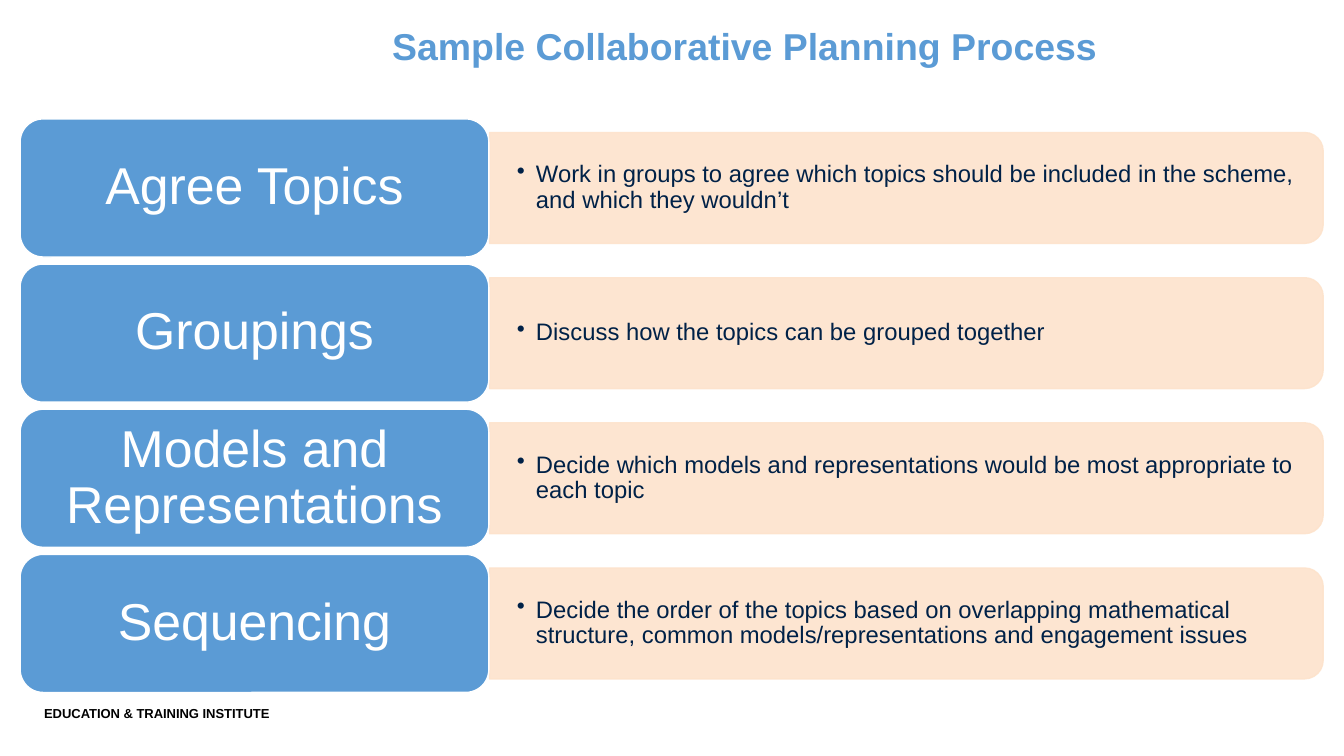
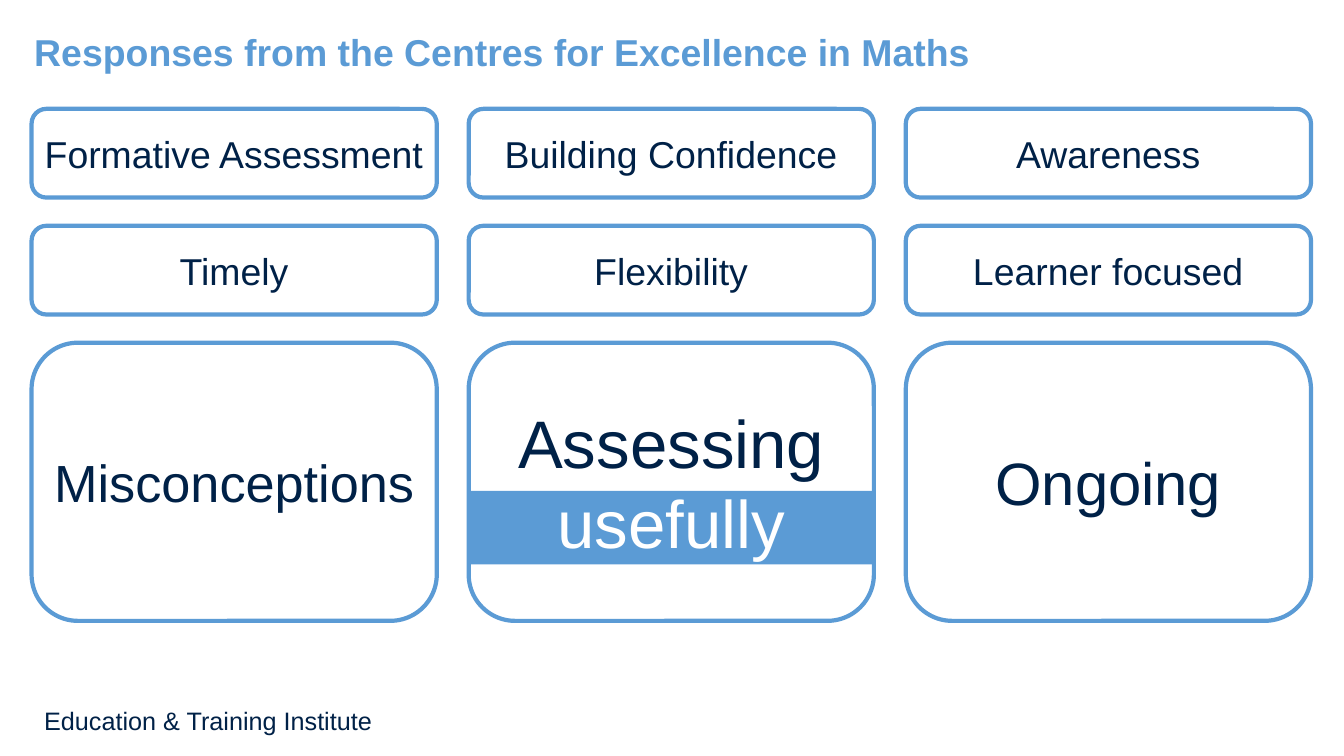
import pptx
import pptx.dml.color
import pptx.enum.shapes
import pptx.enum.text
import pptx.oxml.ns
import pptx.util
from lxml import etree

WIDTH = pptx.util.Inches(13.33)
HEIGHT = pptx.util.Inches(7.5)
COLUMN = WIDTH / 40
ROW = HEIGHT / 30
BLUE, NAVY, PEACH, WHITE, BLACK = "5B9BD5", "002147", "FDE3CC", "FFFFFF", "000000"
FONT = "Arial"
TITLE_SIZE = 26.7

SHAPE = pptx.enum.shapes.MSO_SHAPE
CENTER = pptx.enum.text.PP_ALIGN.CENTER
MIDDLE = pptx.enum.text.MSO_ANCHOR.MIDDLE

STEPS = [
    ("Agree Topics",
     "Work in groups to agree which topics should be included in the scheme, and which they wouldn’t"),
    ("Groupings", "Discuss how the topics can be grouped together"),
    ("Models and Representations",
     "Decide which models and representations would be most appropriate to each topic"),
    ("Sequencing",
     "Decide the order of the topics based on overlapping mathematical structure, "
     "common models/representations and engagement issues"),
]

CARD_ROWS = [
    (3.52, [("Formative Assessment", 26.7), ("Building Confidence", 26.7), ("Awareness", 26.7)]),
    (3.52, [("Timely", 26.7), ("Flexibility", 26.7), ("Learner focused", 26.7)]),
    (11.04, [("Misconceptions", 37.3), ("Assessing ", 48), ("Ongoing", 42.7)]),
]


def color(value):
    return pptx.dml.color.RGBColor.from_string(value)


def area(column, row, columns, rows):
    return [round(length) for length in
            (column * COLUMN, row * ROW, columns * COLUMN, rows * ROW)]


def style(span, size, value, bold=False):
    span.font.name = FONT
    span.font.size = pptx.util.Pt(size)
    span.font.bold = bold
    span.font.color.rgb = color(value)


def write(box, text, size, value, bold=False, inset=(0, 0), align=None, anchor=None):
    frame = box.text_frame
    frame.text = text
    frame.word_wrap = True
    frame.margin_left = frame.margin_right = pptx.util.Inches(inset[0])
    frame.margin_top = frame.margin_bottom = pptx.util.Inches(inset[1])
    frame.vertical_anchor = anchor
    para = frame.paragraphs[0]
    para.alignment = align
    style(para.runs[0], size, value, bold)
    return para


def add_text(page, place, text, size, value, **options):
    return write(page.shapes.add_textbox(*area(*place)), text, size, value, **options)


def add_block(page, kind, place, fill=None, line=None, weight=1):
    block = page.shapes.add_shape(kind, *area(*place))
    block.shadow.inherit = False
    if fill:
        block.fill.solid()
        block.fill.fore_color.rgb = color(fill)
    else:
        block.fill.background()
    if line:
        block.line.color.rgb = color(line)
        block.line.width = pptx.util.Pt(weight)
    else:
        block.line.fill.background()
    return block


def set_opacity(block, percent):
    properties = block._element.spPr
    for tint in list(properties.iter(pptx.oxml.ns.qn("a:srgbClr"))):
        alpha = etree.SubElement(tint, pptx.oxml.ns.qn("a:alpha"))
        alpha.set("val", str(percent * 1000))


def set_bullet(para, indent):
    properties = para._p.get_or_add_pPr()
    properties.set("marL", str(pptx.util.Inches(indent)))
    properties.set("indent", str(-pptx.util.Inches(indent)))
    etree.SubElement(properties, pptx.oxml.ns.qn("a:buChar")).set("char", "•")


def add_title(page, place, text):
    para = add_text(page, place, text, TITLE_SIZE, BLUE, bold=True)
    para.line_spacing = pptx.util.Pt(TITLE_SIZE)


def add_footer(page, text, size, value, bold=False):
    add_text(page, (1.02, 27.8, 33.63, 1.6), text, size, value, bold=bold, inset=(0.1, 0.05))


def add_panel(page, column, row, columns, rows):
    turned_columns = rows * ROW / COLUMN
    turned_rows = columns * COLUMN / ROW
    place = (column + (columns - turned_columns) / 2, row + (rows - turned_rows) / 2,
             turned_columns, turned_rows)
    panel = add_block(page, SHAPE.ROUND_2_SAME_RECTANGLE, place, PEACH, PEACH)
    panel.rotation = 90
    set_opacity(panel, 90)


def add_step(page, row, label, detail):
    panel_place = (14.57, row + 0.54, 24.81, 4.4)
    add_panel(page, *panel_place)
    para = add_text(page, panel_place, detail, 17, NAVY, inset=(0.27, 0.14), anchor=MIDDLE)
    para.line_spacing = 0.9
    set_bullet(para, 0.19)
    block = add_block(page, SHAPE.ROUNDED_RECTANGLE, (0.6, row, 13.95, 5.48), BLUE, WHITE)
    para = write(block, label, 37, WHITE, inset=(0.15, 0.08), align=CENTER, anchor=MIDDLE)
    para.line_spacing = 0.9


def add_card(page, place, text, size):
    card = add_block(page, SHAPE.ROUNDED_RECTANGLE, place, line=BLUE, weight=3)
    return write(card, text, size, NAVY, inset=(0, 0.05), align=CENTER, anchor=MIDDLE)


def add_page(deck):
    return deck.slides.add_slide(deck.slide_layouts[6])


def build_process(deck):
    page = add_page(deck)
    add_title(page, (11.67, 1.2, 28, 4), "Sample Collaborative Planning Process")
    add_footer(page, "EDUCATION & TRAINING INSTITUTE", 9.3, BLACK, bold=True)
    for index, (label, detail) in enumerate(STEPS):
        add_step(page, 4.72 + index * 5.76, label, detail)


def build_responses(deck):
    page = add_page(deck)
    add_footer(page, "Education & Training Institute", 18, NAVY)
    add_title(page, (1.02, 1.44, 36.9, 2.68), "Responses from the Centres for Excellence in Maths")
    left, step, width = 0.94, 13.01, 12.06
    add_block(page, SHAPE.RECTANGLE, (left + step, 19.48, width, 2.92), BLUE)
    for row, (height, cards) in enumerate(CARD_ROWS):
        for column, (text, size) in enumerate(cards):
            place = (left + column * step, 4.32 + row * 4.64, width, height)
            para = add_card(page, place, text, size)
            if text == "Assessing ":
                span = para.add_run()
                span.text = "usefully"
                style(span, size, WHITE)


def main():
    deck = pptx.Presentation()
    deck.slide_width = WIDTH
    deck.slide_height = HEIGHT
    build_process(deck)
    build_responses(deck)
    deck.save("out.pptx")


if __name__ == "__main__":
    main()
